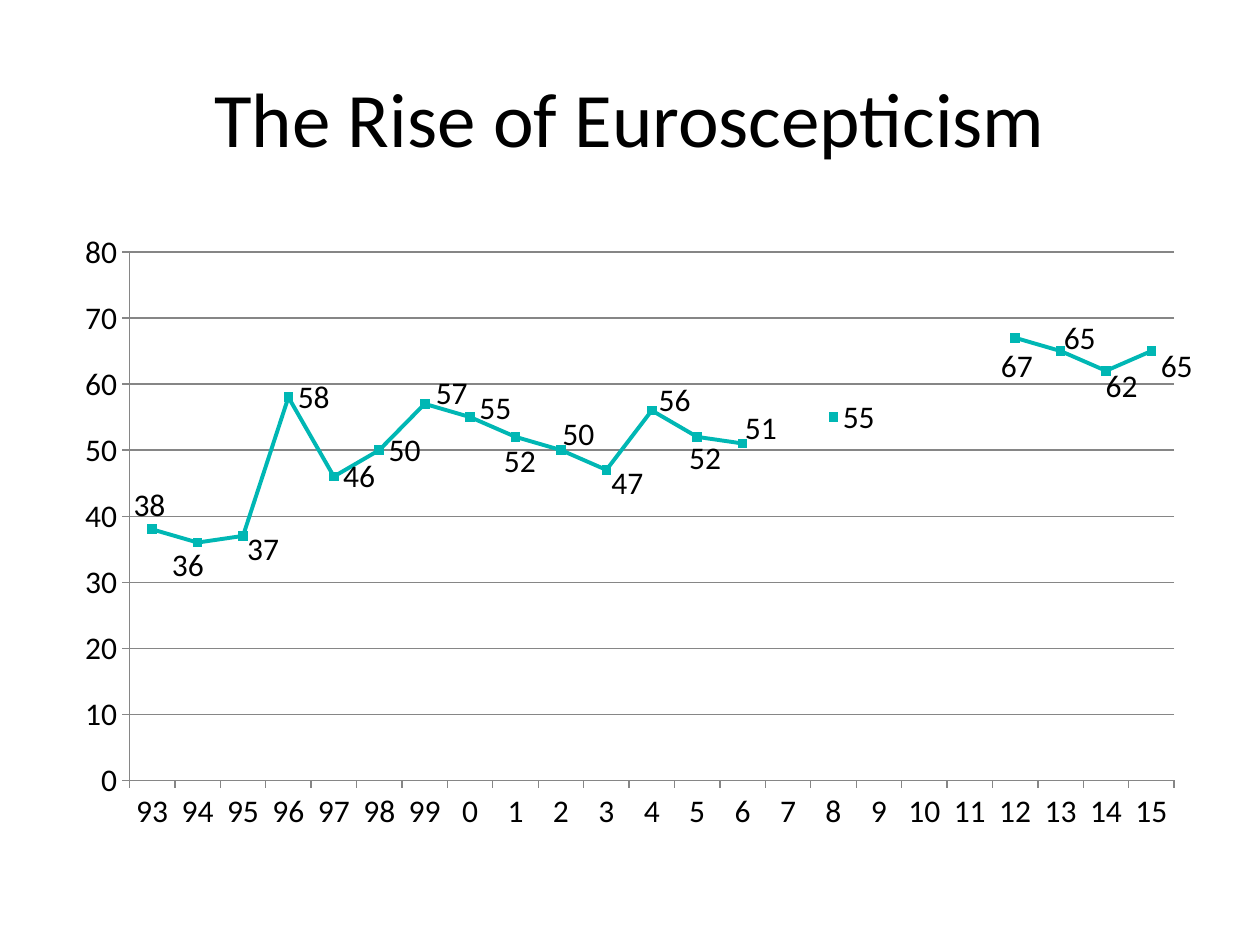
from lxml.etree import SubElement
from pptx import Presentation
from pptx.chart.data import CategoryChartData
from pptx.dml.color import RGBColor
from pptx.enum.chart import XL_CHART_TYPE as ChartType
from pptx.enum.chart import XL_LABEL_POSITION as LabelPosition
from pptx.enum.chart import XL_MARKER_STYLE as MarkerStyle
from pptx.enum.chart import XL_TICK_MARK as TickMark
from pptx.enum.text import MSO_ANCHOR as Anchor
from pptx.enum.text import PP_ALIGN as Align
from pptx.oxml.ns import qn
from pptx.util import Pt

BLACK = RGBColor(0x00, 0x00, 0x00)
TEAL = RGBColor(0x00, 0xB7, 0xB4)
GREY = RGBColor(0x86, 0x86, 0x86)
FONT = "Calibri"

CHART_WIDTH, CHART_HEIGHT = 648, 356.4
YEARS = [*range(93, 100), *range(0, 16)]
SHARES = [38, 36, 37, 58, 46, 50, 57, 55, 52, 50, 47, 56, 52, 51,
          None, 55, None, None, None, 67, 65, 62, 65]

# Label shifts in points from the place right of the marker, by point index
LABEL_SHIFTS = {
    0: (-16, -14), 1: (-20, 13), 2: (-3, 7.5), 6: (1, -6), 7: (0, -5),
    8: (-12, 14), 9: (-4.5, -9), 10: (-2.5, 7.5), 11: (-1.5, -5.5),
    12: (-10, 12.5), 13: (-4, -8.5), 19: (-13.5, 16.5), 20: (-3.5, -7.5),
    21: (-5.5, 9), 22: (0, 8.5),
}


def style_font(font, size):
    font.name = FONT
    font.size = Pt(size)
    font.color.rgb = BLACK


def style_line(line, color, width):
    line.color.rgb = color
    line.width = Pt(width)


def add_title(slide, text):
    title = slide.shapes.add_textbox(Pt(36), Pt(21.6), Pt(648), Pt(90))
    frame = title.text_frame
    frame.word_wrap = True
    frame.vertical_anchor = Anchor.MIDDLE
    paragraph = frame.paragraphs[0]
    paragraph.alignment = Align.CENTER
    run = paragraph.add_run()
    run.text = text
    style_font(run.font, 44)


def fill_layout(layout, **settings):
    manual = SubElement(layout, qn("c:manualLayout"))
    for tag, value in settings.items():
        SubElement(manual, qn(f"c:{tag}")).set("val", str(value))


def place_plot_area(chart, left, top, width, height):
    plot_area = chart.element.find(".//" + qn("c:plotArea"))
    for old_layout in plot_area.findall(qn("c:layout")):
        plot_area.remove(old_layout)
    layout = SubElement(plot_area, qn("c:layout"))
    plot_area.insert(0, layout)
    fill_layout(layout, layoutTarget="inner", xMode="edge", yMode="edge",
                x=left / CHART_WIDTH, y=top / CHART_HEIGHT,
                w=width / CHART_WIDTH, h=height / CHART_HEIGHT)


def shift_labels(chart, series):
    for index in LABEL_SHIFTS:
        series.points[index].data_label.position = LabelPosition.RIGHT
    for label in chart.element.iter(qn("c:dLbl")):
        index = label.find(qn("c:idx"))
        right, down = LABEL_SHIFTS[int(index.get("val"))]
        layout = SubElement(label, qn("c:layout"))
        index.addnext(layout)
        fill_layout(layout, x=right / CHART_WIDTH, y=down / CHART_HEIGHT)


def style_axis(axis):
    axis.major_tick_mark = TickMark.OUTSIDE
    axis.minor_tick_mark = TickMark.NONE
    style_line(axis.format.line, GREY, 0.75)
    style_font(axis.tick_labels.font, 18)


def style_series(series):
    series.smooth = False
    style_line(series.format.line, TEAL, 2.25)
    marker = series.marker
    marker.style = MarkerStyle.SQUARE
    marker.size = 5
    marker.format.fill.solid()
    marker.format.fill.fore_color.rgb = TEAL
    style_line(marker.format.line, TEAL, 0.75)
    labels = series.data_labels
    labels.show_value = True
    labels.position = LabelPosition.RIGHT
    style_font(labels.font, 18)


def add_euroscepticism_chart(slide):
    data = CategoryChartData()
    data.categories = YEARS
    data.add_series("Series 1", SHARES)
    chart = slide.shapes.add_chart(
        ChartType.LINE_MARKERS, Pt(36), Pt(126),
        Pt(CHART_WIDTH), Pt(CHART_HEIGHT), data).chart
    chart.has_title = False
    chart.has_legend = False
    style_font(chart.font, 18)
    chart.plots[0].vary_by_categories = False

    # Axes
    style_axis(chart.category_axis)
    shares_axis = chart.value_axis
    style_axis(shares_axis)
    shares_axis.minimum_scale = 0
    shares_axis.maximum_scale = 80
    shares_axis.major_unit = 10
    shares_axis.has_major_gridlines = True
    style_line(shares_axis.major_gridlines.format.line, GREY, 0.75)

    # Line and its labels
    series = chart.plots[0].series[0]
    style_series(series)
    shift_labels(chart, series)
    place_plot_area(chart, 38, 18, 597, 302)


def main():
    deck = Presentation()
    deck.slide_width, deck.slide_height = Pt(720), Pt(540)
    slide = deck.slides.add_slide(deck.slide_layouts[6])
    add_title(slide, "The Rise of Euroscepticism")
    add_euroscepticism_chart(slide)
    deck.save("out.pptx")


if __name__ == "__main__":
    main()
